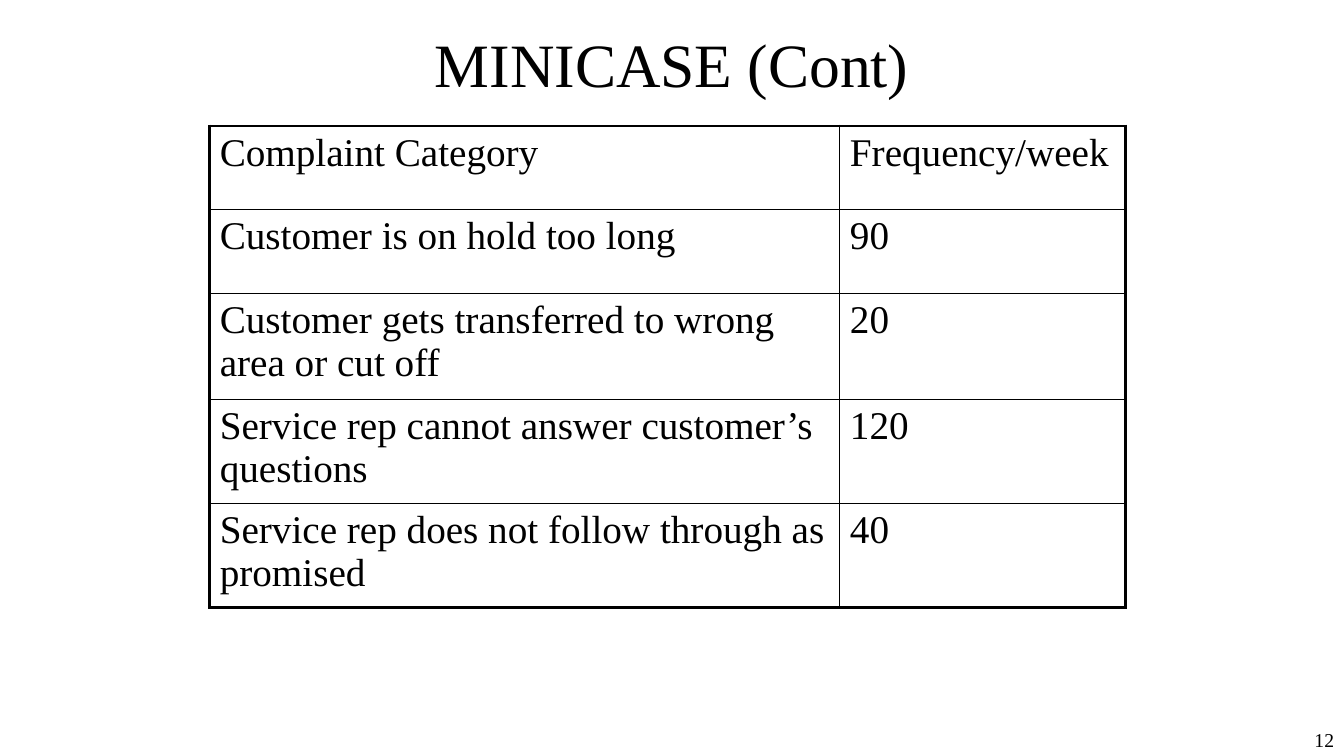
import pptx
import pptx.util
import pptx.dml.color
import pptx.enum.text
import pptx.oxml
import pptx.oxml.ns

Inches = pptx.util.Inches
Align = pptx.enum.text.PP_ALIGN
Anchor = pptx.enum.text.MSO_ANCHOR

COLOURS = {"ink": "000000"}
FONT = "Times New Roman"
OUTER, INNER = 2.25, 1

COMPLAINTS = [
    ("Complaint Category", "Frequency/week"),
    ("Customer is on hold too long", "90"),
    ("Customer gets transferred to wrong area or cut off", "20"),
    ("Service rep cannot answer customer’s questions", "120"),
    ("Service rep does not follow through as promised", "40"),
]


def write_text(frame, text, size=28, align=Align.LEFT, anchor=Anchor.TOP, wrap=True):
    frame.word_wrap = wrap
    frame.vertical_anchor = anchor
    para = frame.paragraphs[0]
    para.alignment = align
    span = para.add_run()
    span.text = text
    span.font.name = FONT
    span.font.size = pptx.util.Pt(size)
    span.font.color.rgb = pptx.dml.color.RGBColor.from_string(COLOURS["ink"])


class SlideBuilder:
    def __init__(self, deck):
        self.page = deck.slides.add_slide(deck.slide_layouts[5])

    def title(self, text, left, top, width, height):
        box = self.page.shapes.title
        box.left, box.top = Inches(left), Inches(top)
        box.width, box.height = Inches(width), Inches(height)
        write_text(box.text_frame, text, size=44, align=Align.CENTER, anchor=Anchor.MIDDLE)

    def label(self, text, left, top, width, height, **style):
        box = self.page.shapes.add_textbox(
            Inches(left), Inches(top), Inches(width), Inches(height))
        write_text(box.text_frame, text, **style)

    def borders(self, cell, widths):
        properties = cell._tc.get_or_add_tcPr()
        for index, (side, points) in enumerate(widths.items()):
            line = pptx.oxml.parse_xml(
                f'<a:ln{side} {pptx.oxml.ns.nsdecls("a")} w="{int(pptx.util.Pt(points))}">'
                f'<a:solidFill><a:srgbClr val="{COLOURS["ink"]}"/></a:solidFill>'
                f'</a:ln{side}>')
            properties.insert(index, line)

    def table(self, rows, left, top, column_widths, row_heights):
        frame = self.page.shapes.add_table(
            len(rows), len(column_widths), Inches(left), Inches(top),
            Inches(sum(column_widths)), Inches(sum(row_heights)))
        grid = frame.table
        grid.first_row = grid.horz_banding = False
        for column, width in zip(grid.columns, column_widths):
            column.width = Inches(width)
        last_row, last_column = len(rows) - 1, len(column_widths) - 1
        for r, values in enumerate(rows):
            grid.rows[r].height = Inches(row_heights[r])
            for c, value in enumerate(values):
                cell = grid.cell(r, c)
                cell.fill.background()
                write_text(cell.text_frame, value)
                # Heavy lines around the outside, thin lines within
                self.borders(cell, {
                    "L": OUTER if c == 0 else INNER,
                    "R": OUTER if c == last_column else INNER,
                    "T": OUTER if r == 0 else INNER,
                    "B": OUTER if r == last_row else INNER,
                })


def main():
    deck = pptx.Presentation()
    deck.slide_width, deck.slide_height = Inches(13.33), Inches(7.5)
    slide = SlideBuilder(deck)

    # Slide number
    slide.label("12", 11.89, 7.17, 1.44, 0.33, size=14, align=Align.RIGHT)

    # Title
    slide.title("MINICASE (Cont)", 0, 0, 13.33, 1.25)

    # Complaint frequencies
    slide.table(COMPLAINTS, 2.08, 1.25, [6.25, 2.83], [0.83, 0.83, 1.05, 0.83, 0.83])

    deck.save("out.pptx")


if __name__ == "__main__":
    main()
